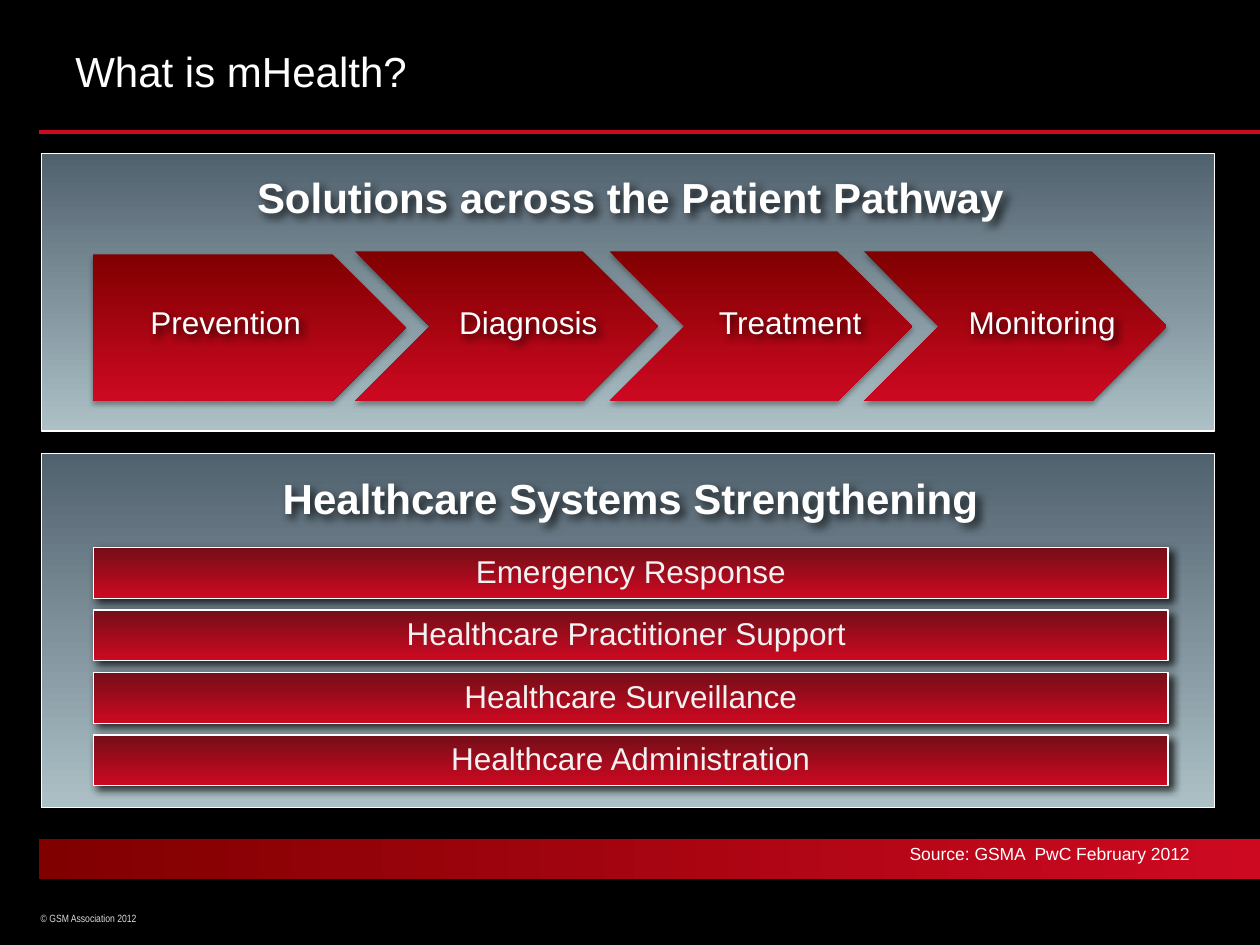
"""Build the mHealth overview slide with the patient pathway and healthcare systems panels."""
import pptx
import pptx.dml.color
import pptx.enum.shapes
import pptx.enum.text
import pptx.oxml
import pptx.oxml.ns
import pptx.util

Cm = pptx.util.Cm
Pt = pptx.util.Pt
RGBColor = pptx.dml.color.RGBColor
SHAPE = pptx.enum.shapes.MSO_SHAPE
ALIGN = pptx.enum.text.PP_ALIGN

BLACK = RGBColor(0x00, 0x00, 0x00)
WHITE = RGBColor(0xFF, 0xFF, 0xFF)
PALE = RGBColor(0xF2, 0xF2, 0xF2)
GREY = RGBColor(0xDD, 0xDD, 0xDD)
RED = RGBColor(0xCD, 0x09, 0x21)
DARK_RED = RGBColor(0x80, 0x00, 0x00)
BAR_RED = RGBColor(0x74, 0x0E, 0x18)
SLATE = RGBColor(0x51, 0x62, 0x6F)
MIST = RGBColor(0xAC, 0xC0, 0xC6)

SOFT_SHADOW = (35, 3.1, 1.8, 90)
DEEP_SHADOW = (75, 5, 3, 45)


def add_block(kind, left, top, width, height, colors, shadow, angle=270, outlined=False):
    s = slide.shapes.add_shape(kind, Cm(left), Cm(top), Cm(width), Cm(height))
    s.fill.gradient()
    s.fill.gradient_angle = angle
    for stop, color in zip(s.fill.gradient_stops, colors):
        stop.color.rgb = color
    if outlined:
        s.line.color.rgb = WHITE
        s.line.width = Pt(0.75)
    else:
        s.line.fill.background()
    add_text_or_shadow(s, shadow=shadow)
    return s


def add_text_or_shadow(s, text=None, size=18, color=WHITE, align=ALIGN.CENTER,
                       bold=False, font="Arial", shadow=None):
    if shadow:
        alpha, blur, distance, direction = shadow
        s.shadow.inherit = False
        effects = s._element.spPr.find(pptx.oxml.ns.qn("a:effectLst"))
        effects.append(pptx.oxml.parse_xml(
            f'<a:outerShdw {pptx.oxml.ns.nsdecls("a")} blurRad="{Pt(blur)}" dist="{Pt(distance)}" '
            f'dir="{direction * 60000}" algn="ctr" rotWithShape="0"><a:srgbClr val="000000">'
            f'<a:alpha val="{alpha * 1000}"/></a:srgbClr></a:outerShdw>'))
    if text:
        tf = s.text_frame
        tf.word_wrap = True
        tf.text = text
        p = tf.paragraphs[0]
        p.alignment = align
        r = p.runs[0]
        r.font.name = font
        r.font.size = Pt(size)
        r.font.bold = bold
        r.font.color.rgb = color


prs = pptx.Presentation()
prs.slide_width = Cm(25.4)
prs.slide_height = Cm(19.05)
slide = prs.slides.add_slide(prs.slide_layouts[6])

backdrop = slide.shapes.add_shape(SHAPE.RECTANGLE, 0, 0, prs.slide_width, prs.slide_height)
backdrop.shadow.inherit = False
backdrop.fill.solid()
backdrop.fill.fore_color.rgb = BLACK
backdrop.line.fill.background()

copyright_box = slide.shapes.add_textbox(Cm(0.79), Cm(18.26), Cm(3.96), Cm(0.5))
copyright_box.text_frame.margin_left = Cm(0.03)
add_text_or_shadow(copyright_box, "© GSM Association 2012", 6, GREY, ALIGN.LEFT, font="Arial Narrow")

add_block(SHAPE.RECTANGLE, 0.79, 16.92, 24.61, 0.81, (DARK_RED, RED), SOFT_SHADOW, angle=0)

rule = slide.shapes.add_connector(
    pptx.enum.shapes.MSO_CONNECTOR.STRAIGHT, Cm(0.79), Cm(2.67), Cm(25.4), Cm(2.67))
rule.line.color.rgb = RED
rule.line.width = Pt(2.25)
rule._element.spPr.append(pptx.oxml.parse_xml(f'<a:effectLst {pptx.oxml.ns.nsdecls("a")}/>'))

title = slide.shapes.add_textbox(Cm(1.27), Cm(0.8), Cm(22.86), Cm(1.93))
add_text_or_shadow(title, "What is mHealth?", 24, align=ALIGN.LEFT)

source = slide.shapes.add_textbox(Cm(4.37), Cm(16.87), Cm(19.86), Cm(1.55))
add_text_or_shadow(source, "Source: GSMA  PwC February 2012", 10, align=ALIGN.RIGHT)

panels = [
    ("Solutions across the Patient Pathway", 3.1, 5.59, 3.33),
    ("Healthcare Systems Strengthening", 9.14, 7.14, 9.4),
]
for heading, top, height, heading_top in panels:
    add_block(SHAPE.RECTANGLE, 0.84, top, 23.65, height, (SLATE, MIST), DEEP_SHADOW, outlined=True)
    s = slide.shapes.add_textbox(Cm(2.18), Cm(heading_top), Cm(21.06), Cm(1.27))
    add_text_or_shadow(s, heading, 24, bold=True, shadow=DEEP_SHADOW)

add_block(SHAPE.PENTAGON, 1.88, 5.13, 6.3, 2.95, (DARK_RED, RED), SOFT_SHADOW)
for i in range(3):
    add_block(SHAPE.CHEVRON, 7.16 + 5.13 * i, 5.07, 6.1, 3.02, (DARK_RED, RED), SOFT_SHADOW)

steps = [("Prevention", 2.16), ("Diagnosis", 8.26), ("Treatment", 13.54), ("Monitoring", 18.62)]
for step, left in steps:
    s = slide.shapes.add_textbox(Cm(left), Cm(5.99), Cm(4.78), Cm(1.02))
    add_text_or_shadow(s, step, shadow=DEEP_SHADOW)

systems = [
    "Emergency Response",
    "Healthcare Practitioner Support ",
    "Healthcare Surveillance",
    "Healthcare Administration",
]
for i, system in enumerate(systems):
    s = add_block(SHAPE.RECTANGLE, 1.88, 11.04 + 1.26 * i, 21.67, 1.02,
                  (BAR_RED, RED), DEEP_SHADOW, outlined=True)
    s.text_frame.margin_top = 0
    s.text_frame.margin_bottom = Cm(0.1)
    add_text_or_shadow(s, system, color=PALE)

prs.save("out.pptx")
